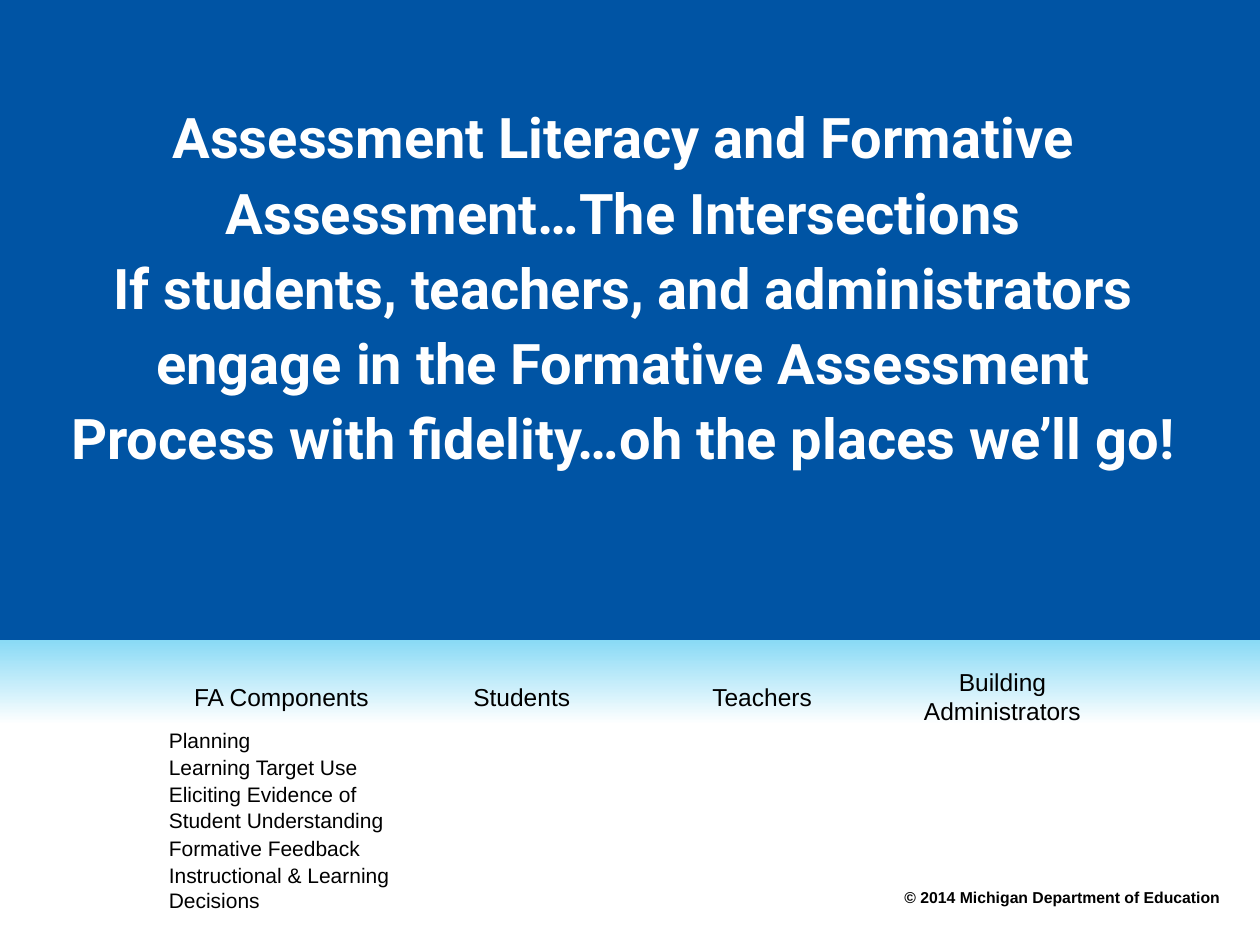
from pptx import Presentation
from pptx.dml.color import RGBColor
from pptx.enum import shapes, text
from pptx.util import Inches, Pt

COLORS = {"blue": "0054A4", "sky": "89DAF5", "white": "FFFFFF", "black": "000000"}
NO_GRID_STYLE = "{2D5ABB26-0587-4C30-8999-92F81FD0307C}"
HEADINGS = ["FA Components", "Students", "Teachers", "Building Administrators"]
COMPONENTS = [
    ("Planning", 1),
    ("Learning Target Use", 1),
    ("Eliciting Evidence of Student Understanding", 2),
    ("Formative Feedback", 1),
    ("Instructional & Learning Decisions", 2),
]
HEADING_HEIGHT = 0.47
LINE_HEIGHT = 0.2


def rgb(name):
    return RGBColor.from_string(COLORS[name])


def write(frame, words, size=12, font="Arial", color="black", bold=False,
          align=text.PP_ALIGN.LEFT, spacing=1.0):
    frame.word_wrap = True
    paragraph = frame.paragraphs[0]
    paragraph.text = words
    paragraph.alignment = align
    paragraph.line_spacing = spacing
    for run in paragraph.runs:
        run.font.size = Pt(size)
        run.font.name = font
        run.font.bold = bold
        run.font.color.rgb = rgb(color)


def add_band(slide, box, color, fade_to=None):
    band = slide.shapes.add_shape(shapes.MSO_SHAPE.RECTANGLE, *map(Inches, box))
    band.shadow.inherit = False
    band.line.fill.background()
    if fade_to:
        band.fill.gradient()
        band.fill.gradient_angle = 270
        for stop, name in zip(band.fill.gradient_stops, (color, fade_to)):
            stop.color.rgb = rgb(name)
            stop.position = 0 if name == color else 1
    else:
        band.fill.solid()
        band.fill.fore_color.rgb = rgb(color)
    return band


def add_background(slide, left, top, width, height):
    banner_height, fade_height = 5.08, 0.67
    add_band(slide, (left, top, width, banner_height), "blue")
    add_band(slide, (left, top + banner_height, width, fade_height), "sky", "white")


def add_footer(slide, left, top, width, height):
    panel = add_band(slide, (left, top, width, height), "white")
    panel.line.color.rgb = rgb("white")
    panel.line.width = Pt(2)
    copyright_line = slide.shapes.add_textbox(
        Inches(left + 1.66), Inches(top + 1.25), Inches(2.75), Inches(0.25))
    write(copyright_line.text_frame, "© 2014 Michigan Department of Education",
          size=9, bold=True)


def add_title(slide, left, top, width, height):
    title = slide.shapes.add_textbox(*map(Inches, (left, top, width, height)))
    title.text_frame.vertical_anchor = text.MSO_ANCHOR.MIDDLE
    write(title.text_frame,
          "Assessment Literacy and Formative Assessment…The Intersections\v"
          "If students, teachers, and administrators engage in the Formative "
          "Assessment Process with fidelity…oh the places we’ll go!",
          size=32, font="Roboto", color="white", bold=True,
          align=text.PP_ALIGN.CENTER, spacing=1.12)


def fill_cell(cell, words, size, align, anchor):
    cell.fill.background()
    cell.margin_left = cell.margin_right = Inches(0.06)
    cell.margin_top = cell.margin_bottom = 0
    cell.vertical_anchor = anchor
    write(cell.text_frame, words, size=size, align=align, spacing=1.07)
    if not words:
        end = cell.text_frame.paragraphs[0]._p.get_or_add_endParaRPr()
        end.set("sz", str(size * 100))


def add_components_table(slide, left, top, width):
    height = HEADING_HEIGHT + LINE_HEIGHT * sum(lines for _, lines in COMPONENTS)
    frame = slide.shapes.add_table(
        len(COMPONENTS) + 1, len(HEADINGS), *map(Inches, (left, top, width, height)))
    table = frame.table
    table.first_row = table.horz_banding = False
    table._tbl.tblPr[0].text = NO_GRID_STYLE
    table.rows[0].height = Inches(HEADING_HEIGHT)
    for column, heading in enumerate(HEADINGS):
        table.columns[column].width = Inches(width / len(HEADINGS))
        fill_cell(table.cell(0, column), heading, 14,
                  text.PP_ALIGN.CENTER, text.MSO_ANCHOR.MIDDLE)
    for row, (component, lines) in enumerate(COMPONENTS, 1):
        table.rows[row].height = Inches(LINE_HEIGHT * lines)
        for column in range(len(HEADINGS)):
            fill_cell(table.cell(row, column), "" if column else component, 12,
                      text.PP_ALIGN.LEFT, text.MSO_ANCHOR.TOP)


def main():
    deck = Presentation()
    deck.slide_width, deck.slide_height = Inches(10), Inches(7.5)
    slide = deck.slides.add_slide(deck.slide_layouts[6])
    add_background(slide, 0, 0, 10, 7.5)
    add_footer(slide, 5.42, 5.75, 4.17, 1.33)
    add_title(slide, 0.45, 1.62, 9, 1.25)
    add_components_table(slide, 1.28, 5.28, 7.63)
    deck.save("out.pptx")


if __name__ == "__main__":
    main()
